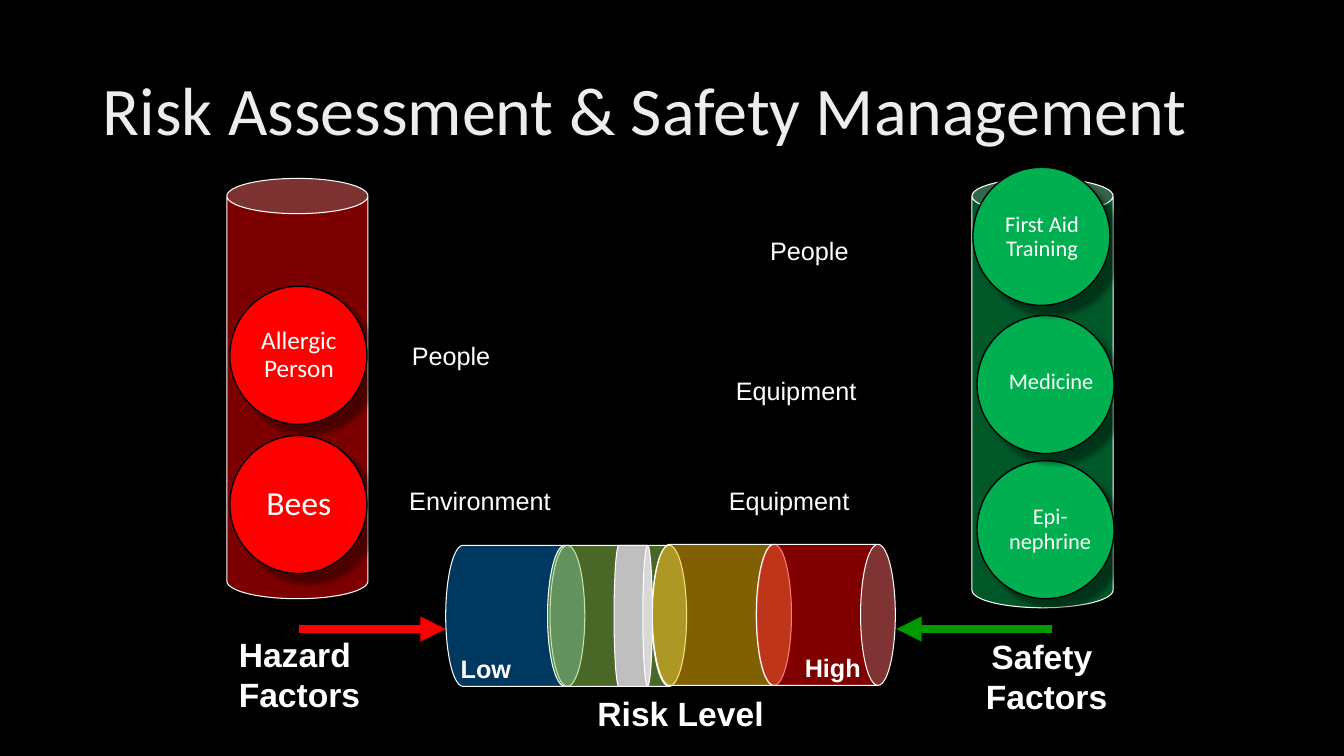
from lxml import etree
from pptx import Presentation
from pptx.dml.color import RGBColor
from pptx.enum.shapes import MSO_CONNECTOR, MSO_SHAPE
from pptx.enum.text import MSO_ANCHOR, PP_ALIGN
from pptx.oxml import parse_xml
from pptx.oxml.ns import nsdecls, qn
from pptx.util import Inches, Pt


def rgb(value):
    return RGBColor.from_string(value)


def add_text(text, x, y, w, h, size=18, font="Arial", bold=False,
             align=PP_ALIGN.LEFT, anchor=MSO_ANCHOR.TOP, inset=None, spacing=None):
    tf = s.shapes.add_textbox(Inches(x), Inches(y), Inches(w), Inches(h)).text_frame
    tf.word_wrap = True
    tf.vertical_anchor = anchor
    if inset is not None:
        tf.margin_left = tf.margin_right = Inches(inset)
        tf.margin_top = tf.margin_bottom = Inches(inset)
    p = tf.paragraphs[0]
    p.text = text
    p.alignment = align
    p.line_spacing = spacing
    for r in p.runs:
        r.font.size, r.font.name, r.font.bold = Pt(size), font, bold
        r.font.color.rgb = rgb("FFFFFF")
    return p


def add_solid(kind, x, y, w, h, fill, line="FFFFFF", width=0.75,
              alpha=100, rotation=0, shadow=None):
    sp = s.shapes.add_shape(kind, Inches(x), Inches(y), Inches(w), Inches(h))
    sp.rotation = rotation
    sp.fill.solid()
    sp.fill.fore_color.rgb = rgb(fill)
    sp.line.color.rgb = rgb(line)
    sp.line.width = Pt(width)
    sp.shadow.inherit = False
    if alpha < 100:
        color = sp.fill._xPr.find(qn("a:solidFill"))[0]
        etree.SubElement(color, qn("a:alpha"), val=str(alpha * 1000))
    if shadow:
        distance, angle = shadow
        effects = sp._element.spPr.find(qn("a:effectLst"))
        effects.append(parse_xml(
            f'<a:outerShdw {nsdecls("a")} blurRad="{Pt(4)}" dist="{Pt(distance)}" '
            f'dir="{angle * 60000}" algn="tl" rotWithShape="0">'
            '<a:srgbClr val="000000"><a:alpha val="40000"/></a:srgbClr></a:outerShdw>'))


prs = Presentation()
prs.slide_width, prs.slide_height = Inches(13.33), Inches(7.5)
s = prs.slides.add_slide(prs.slide_layouts[6])
s.background.fill.solid()
s.background.fill.fore_color.rgb = rgb("000000")

# Title with gradient text
p = add_text("Risk Assessment & Safety Management", 0.92, 0.4, 11.5, 1.45,
             size=48.6, font="Calibri", anchor=MSO_ANCHOR.MIDDLE, spacing=0.9)
rPr = p.runs[0].font._element
rPr.remove(rPr.find(qn("a:solidFill")))
stops = "".join(f'<a:gs pos="{pos * 1000}"><a:srgbClr val="{color}"/></a:gs>'
                for pos, color in [(0, "BFBFBF"), (28, "EDEDED"), (100, "FFFFFF")])
rPr.insert(0, parse_xml(f'<a:gradFill {nsdecls("a")}><a:gsLst>{stops}</a:gsLst>'
                        '<a:lin ang="4800000" scaled="0"/></a:gradFill>'))

# Safety and hazard tubes
for x, h, fill, alpha in [(9.64, 4.26, "00B050", 50), (2.25, 4.17, "FF0000", 49)]:
    add_solid(MSO_SHAPE.CAN, x, 1.77, 1.4, h, fill, alpha=alpha, shadow=(6, 30))

# Risk level gauge with its grey marker
for x, y, fill in [(4.41, 5.42, "0070C0"), (5.42, 5.42, "92D050"),
                   (6.46, 5.41, "FFC000"), (7.49, 5.41, "FF0000")]:
    add_solid(MSO_SHAPE.CAN, x, y, 1.4, 1.38, fill, alpha=50, rotation=90)
add_solid(MSO_SHAPE.CAN, 5.58, 5.92, 1.4, 0.38, "BFBFBF", rotation=90)

# Factor balls: label, size, ball position, label position and width
RED, GREEN = "FF0000", "00B050"
balls = [
    ("Bees", 24, RED, 2.28, 4.32, 2.48, 4.52, 0.97),
    ("Epi-\vnephrine", 16, GREEN, 9.69, 4.57, 9.89, 4.77, 1.05),
    ("Medicine", 16, GREEN, 9.69, 3.13, 9.9, 3.31, 1.05),
    ("First Aid Training", 16, GREEN, 9.65, 1.66, 9.85, 1.87, 0.97),
    ("Allergic Person", 18, RED, 2.28, 2.84, 2.48, 3.04, 0.97),
]
for label, size, fill, x, y, text_x, text_y, text_w in balls:
    add_solid(MSO_SHAPE.OVAL, x, y, 1.36, 1.37, fill, line="000000", width=1,
              shadow=(10, 45))
    add_text(label, text_x, text_y, text_w, 0.97, size=size, font="Calibri",
             align=PP_ALIGN.CENTER, anchor=MSO_ANCHOR.MIDDLE, inset=0.07, spacing=0.9)

# Factor categories
for label, x, y, w, align in [
    ("People", 7.54, 2.29, 1.19, PP_ALIGN.LEFT),
    ("Equipment", 7.2, 3.67, 1.6, PP_ALIGN.LEFT),
    ("Equipment", 7.13, 4.77, 1.59, PP_ALIGN.LEFT),
    ("Environment", 3.94, 4.77, 1.62, PP_ALIGN.RIGHT),
    ("People", 3.94, 3.33, 1.02, PP_ALIGN.RIGHT),
]:
    add_text(label, x, y, w, 0.4, align=align)

# Arrows pushing on the gauge
for start, end, color in [(2.97, 4.42, "FF0000"), (10.43, 8.89, "009900")]:
    arrow = s.shapes.add_connector(MSO_CONNECTOR.STRAIGHT, Inches(start), Inches(6.24),
                                   Inches(end), Inches(6.24))
    arrow.line.color.rgb = rgb(color)
    arrow.line.width = Pt(6)
    etree.SubElement(arrow.line._get_or_add_ln(), qn("a:tailEnd"), type="triangle")
    etree.SubElement(arrow._element.spPr, qn("a:effectLst"))

# Bold captions
for label, x, y, w, h, size in [
    ("Hazard \vFactors", 1.98, 6.24, 1.98, 0.91, 24),
    ("Safety \vFactors", 9.46, 6.26, 1.84, 0.91, 24),
    ("Risk Level", 5.23, 6.83, 3.04, 0.5, 24),
    ("Low", 4.29, 6.43, 1.06, 0.4, 18),
    ("High", 7.73, 6.42, 1.06, 0.4, 18),
]:
    add_text(label, x, y, w, h, size=size, bold=True, align=PP_ALIGN.CENTER)

prs.save("out.pptx")
